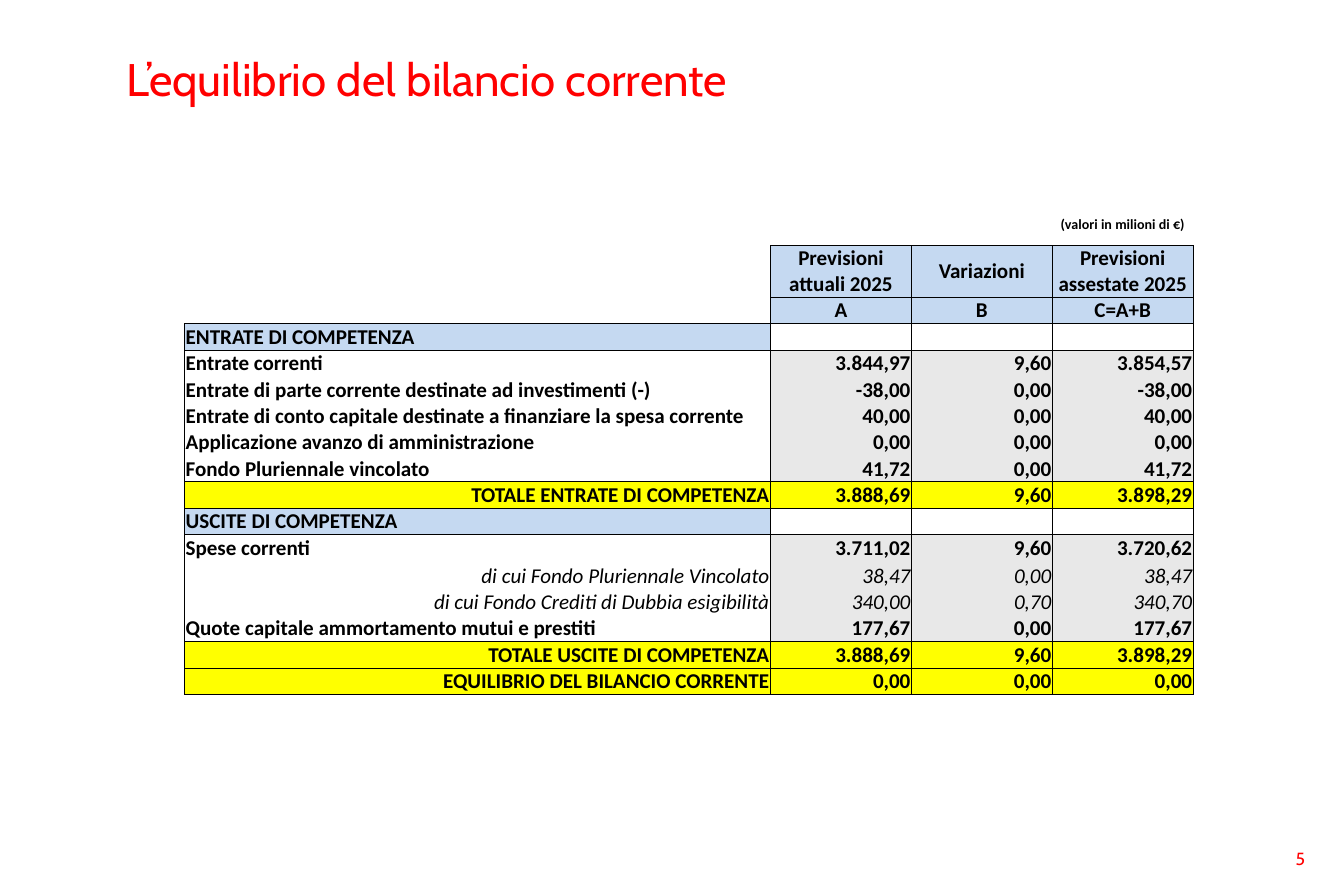
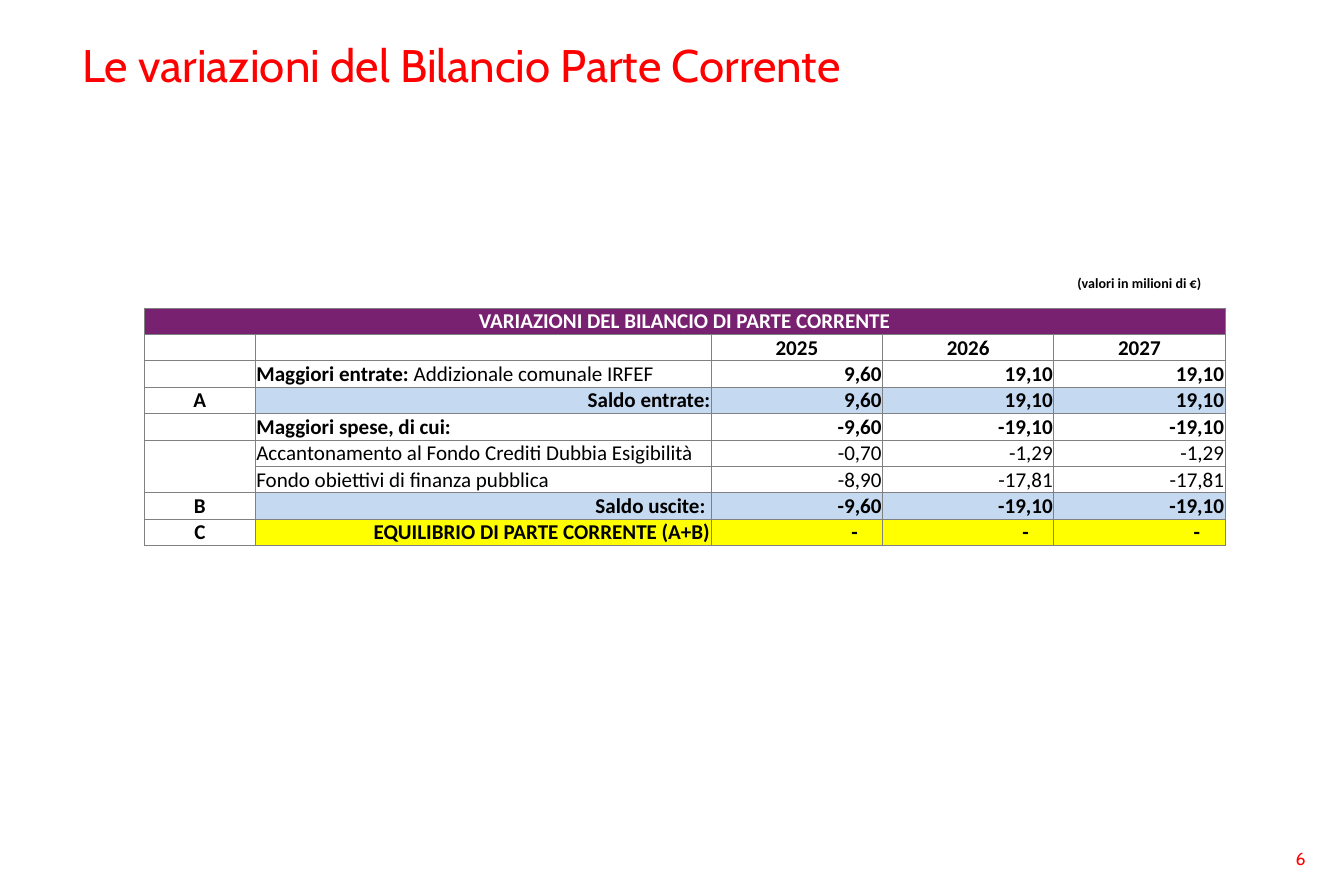
from lxml.etree import SubElement
from pptx import Presentation
from pptx.dml.color import RGBColor
from pptx.enum.text import MSO_ANCHOR, MSO_AUTO_SIZE, PP_ALIGN
from pptx.oxml.ns import qn
from pptx.util import Cm, Pt

RED = RGBColor(0xFF, 0x00, 0x00)
BLACK = RGBColor(0x00, 0x00, 0x00)
WHITE = RGBColor(0xFF, 0xFF, 0xFF)
GREY = RGBColor(0x80, 0x80, 0x80)
LIGHT_GREY = RGBColor(0xE8, 0xE8, 0xE8)
LIGHT_BLUE = RGBColor(0xC5, 0xD9, 0xF1)
YELLOW = RGBColor(0xFF, 0xFF, 0x00)
PURPLE = RGBColor(0x78, 0x21, 0x70)
TITLE_FONT = "Cabin"
TABLE_FONT = "Calibri"
NO_STYLE_NO_GRID = "{2D5ABB26-0587-4C30-8999-92F81FD0307C}"
LEFT, CENTER, RIGHT = PP_ALIGN.LEFT, PP_ALIGN.CENTER, PP_ALIGN.RIGHT
FIRST_NUMBER = 5
ROW_HEIGHT = 0.53
UNITS_NOTE = "(valori in milioni di €)"


def style_run(run, font_name, size, color, bold=False, italic=False):
    run.font.name = font_name
    run.font.size = Pt(size)
    run.font.color.rgb = color
    run.font.bold = bold
    run.font.italic = italic


def set_cell(cell, text, align, fill, edges, edge_color, size=12, color=BLACK,
             bold=True, italic=False, anchor=MSO_ANCHOR.MIDDLE):
    cell.margin_left = cell.margin_right = Cm(0.02)
    cell.margin_top = Cm(0.01)
    cell.margin_bottom = Cm(0)
    cell.vertical_anchor = anchor
    properties = cell._tc.get_or_add_tcPr()
    for edge in "LRTB":
        if edge in edges:
            line = SubElement(properties, qn(f"a:ln{edge}"), w=str(Pt(0.5)))
            line_fill = SubElement(line, qn("a:solidFill"))
            SubElement(line_fill, qn("a:srgbClr"), val=str(edge_color))
    if fill is None:
        cell.fill.background()
    else:
        cell.fill.solid()
        cell.fill.fore_color.rgb = fill
    paragraph = cell.text_frame.paragraphs[0]
    paragraph.alignment = align
    if text:
        paragraph.text = text
        style_run(paragraph.runs[0], TABLE_FONT, size, color, bold, italic)
    else:
        SubElement(paragraph._p, qn("a:endParaRPr"), sz=str(size * 100))


presentation = Presentation()
presentation.slide_width = Cm(27)
presentation.slide_height = Cm(18)

slide_plans = [
    {"title": "L’equilibrio del bilancio corrente",
     "title_box": (2.29, 0.89, 22.4, 1.12),
     "table_at": (3.71, 4.09),
     "columns": [11.77] + [2.83] * 3,
     "rows": [0.84, 1.04] + [ROW_HEIGHT] * 10 + [0.56] + [ROW_HEIGHT] * 4},
    {"title": "Le variazioni del Bilancio Parte Corrente",
     "title_box": (1.4, 0.61, 25.6, 1.12),
     "table_at": (2.9, 5.2),
     "columns": [2.23, 9.16] + [3.44] * 3,
     "rows": [0.99] + [ROW_HEIGHT] * 9},
]

tables = []
for number, plan in enumerate(slide_plans, FIRST_NUMBER):
    slide = presentation.slides.add_slide(presentation.slide_layouts[5])
    title = slide.shapes.title
    title.left, title.top, title.width, title.height = map(Cm, plan["title_box"])
    title.text_frame.text = plan["title"]
    title.text_frame.auto_size = MSO_AUTO_SIZE.NONE
    title.text_frame.vertical_anchor = MSO_ANCHOR.TOP
    title.text_frame.paragraphs[0].alignment = LEFT
    style_run(title.text_frame.paragraphs[0].runs[0], TITLE_FONT, 26, RED)

    number_box = slide.shapes.add_textbox(Cm(25.53), Cm(16.92), Cm(1.45), Cm(0.69))
    number_box.text_frame.word_wrap = True
    number_box.text_frame.margin_left = Cm(0.5)
    number_box.text_frame.text = str(number)
    style_run(number_box.text_frame.paragraphs[0].runs[0], TITLE_FONT, 10, RED)

    left, top = plan["table_at"]
    frame = slide.shapes.add_table(
        len(plan["rows"]), len(plan["columns"]), Cm(left), Cm(top),
        Cm(sum(plan["columns"])), Cm(sum(plan["rows"])))
    table = frame.table
    table.first_row = table.horz_banding = False
    table._tbl.tblPr.find(qn("a:tableStyleId")).text = NO_STYLE_NO_GRID
    for column, width in zip(table.columns, plan["columns"]):
        column.width = Cm(width)
    for row, height in zip(table.rows, plan["rows"]):
        row.height = Cm(height)
    tables.append(table)

balance_table, variation_table = tables

balance_styles = {
    "note": (WHITE, WHITE, "", "B", LEFT, CENTER),
    "heading": (WHITE, LIGHT_BLUE, "R", "LRTB", LEFT, CENTER),
    "letters": (WHITE, LIGHT_BLUE, "RB", "LRTB", LEFT, CENTER),
    "section": (LIGHT_BLUE, None, "LRTB", "LRT", LEFT, RIGHT),
    "item": (WHITE, LIGHT_GREY, "LR", "LR", LEFT, RIGHT),
    "detail": (WHITE, LIGHT_GREY, "LR", "LR", RIGHT, RIGHT),
    "total": (YELLOW, YELLOW, "LRTB", "LRTB", RIGHT, RIGHT),
}
balance_rows = [
    ("note", "", "", "", UNITS_NOTE),
    ("heading", "", "Previsioni attuali 2025", "Variazioni", "Previsioni assestate 2025"),
    ("letters", "", "A", "B", "C=A+B"),
    ("section", "ENTRATE DI COMPETENZA", "", "", ""),
    ("item", "Entrate correnti", "3.844,97", "9,60", "3.854,57"),
    ("item", "Entrate di parte corrente destinate ad investimenti (-)",
     "-38,00", "0,00", "-38,00"),
    ("item", "Entrate di conto capitale destinate a finanziare la spesa corrente",
     "40,00", "0,00", "40,00"),
    ("item", "Applicazione avanzo di amministrazione", "0,00", "0,00", "0,00"),
    ("item", "Fondo Pluriennale vincolato", "41,72", "0,00", "41,72"),
    ("total", "TOTALE ENTRATE DI COMPETENZA", "3.888,69", "9,60", "3.898,29"),
    ("section", "USCITE DI COMPETENZA", "", "", ""),
    ("item", "Spese correnti", "3.711,02", "9,60", "3.720,62"),
    ("detail", "di cui Fondo Pluriennale Vincolato", "38,47", "0,00", "38,47"),
    ("detail", "di cui Fondo Crediti di Dubbia esigibilità", "340,00", "0,70", "340,70"),
    ("item", "Quote capitale ammortamento mutui e prestiti", "177,67", "0,00", "177,67"),
    ("total", "TOTALE USCITE DI COMPETENZA", "3.888,69", "9,60", "3.898,29"),
    ("total", "EQUILIBRIO DEL BILANCIO CORRENTE", "0,00", "0,00", "0,00"),
]
for row_index, (kind, *texts) in enumerate(balance_rows):
    label_fill, value_fill, label_edges, value_edges, label_align, value_align = balance_styles[kind]
    for column_index, text in enumerate(texts):
        is_label = column_index == 0
        set_cell(
            balance_table.cell(row_index, column_index), text,
            label_align if is_label else value_align,
            label_fill if is_label else value_fill,
            label_edges if is_label else value_edges,
            BLACK,
            size=8 if kind == "note" else 12,
            bold=kind != "detail", italic=kind == "detail",
            anchor=MSO_ANCHOR.MIDDLE if kind in ("note", "heading") else MSO_ANCHOR.BOTTOM)

variation_styles = {
    "years": (None, LEFT, CENTER, True),
    "item": (None, LEFT, RIGHT, True),
    "detail": (None, LEFT, RIGHT, False),
    "balance": (LIGHT_BLUE, RIGHT, RIGHT, True),
    "result": (YELLOW, RIGHT, RIGHT, True),
}
variation_rows = [
    ("years", "LRT", "", "", "2025", "2026", "2027"),
    ("item", "LRB", "", "Maggiori entrate:", "9,60", "19,10", "19,10"),
    ("balance", "LRTB", "A", "Saldo entrate:", "9,60", "19,10", "19,10"),
    ("item", "LRT", "", "Maggiori spese, di cui:", "-9,60", "-19,10", "-19,10"),
    ("detail", "LR", "", "Accantonamento al Fondo Crediti Dubbia Esigibilità",
     "-0,70", "-1,29", "-1,29"),
    ("detail", "LRB", "", "Fondo obiettivi di finanza pubblica",
     "-8,90", "-17,81", "-17,81"),
    ("balance", "LRTB", "B", "Saldo uscite: ", "-9,60", "-19,10", "-19,10"),
    ("result", "LRTB", "C", "EQUILIBRIO DI PARTE CORRENTE (A+B)", "-", "-", "-"),
]
for column_index, text in enumerate(["", "", "", "", UNITS_NOTE]):
    set_cell(variation_table.cell(0, column_index), text, CENTER, None, "B", GREY, size=8)

variation_table.cell(1, 0).merge(variation_table.cell(1, 4))
for column_index, text in enumerate(
        ["VARIAZIONI DEL BILANCIO DI PARTE CORRENTE", "", "", "", ""]):
    set_cell(variation_table.cell(1, column_index), text, CENTER, PURPLE,
             "LRTB" if text else "TB", GREY, color=WHITE)

for row_index, (kind, letter_edges, letter, label, *values) in enumerate(variation_rows, 2):
    fill, label_align, value_align, bold = variation_styles[kind]
    set_cell(variation_table.cell(row_index, 0), letter, CENTER, None, letter_edges, GREY)
    set_cell(variation_table.cell(row_index, 1), label, label_align, fill, "LRTB", GREY, bold=bold)
    for column_index, value in enumerate(values, 2):
        cell = variation_table.cell(row_index, column_index)
        set_cell(cell, value, value_align, fill, "LRTB", GREY, bold=bold)
        if kind == "result":
            cell.margin_right = Cm(0.5)

surtax_run = variation_table.cell(3, 1).text_frame.paragraphs[0].add_run()
surtax_run.text = " Addizionale comunale IRFEF"
style_run(surtax_run, TABLE_FONT, 12, BLACK)

presentation.save("out.pptx")
